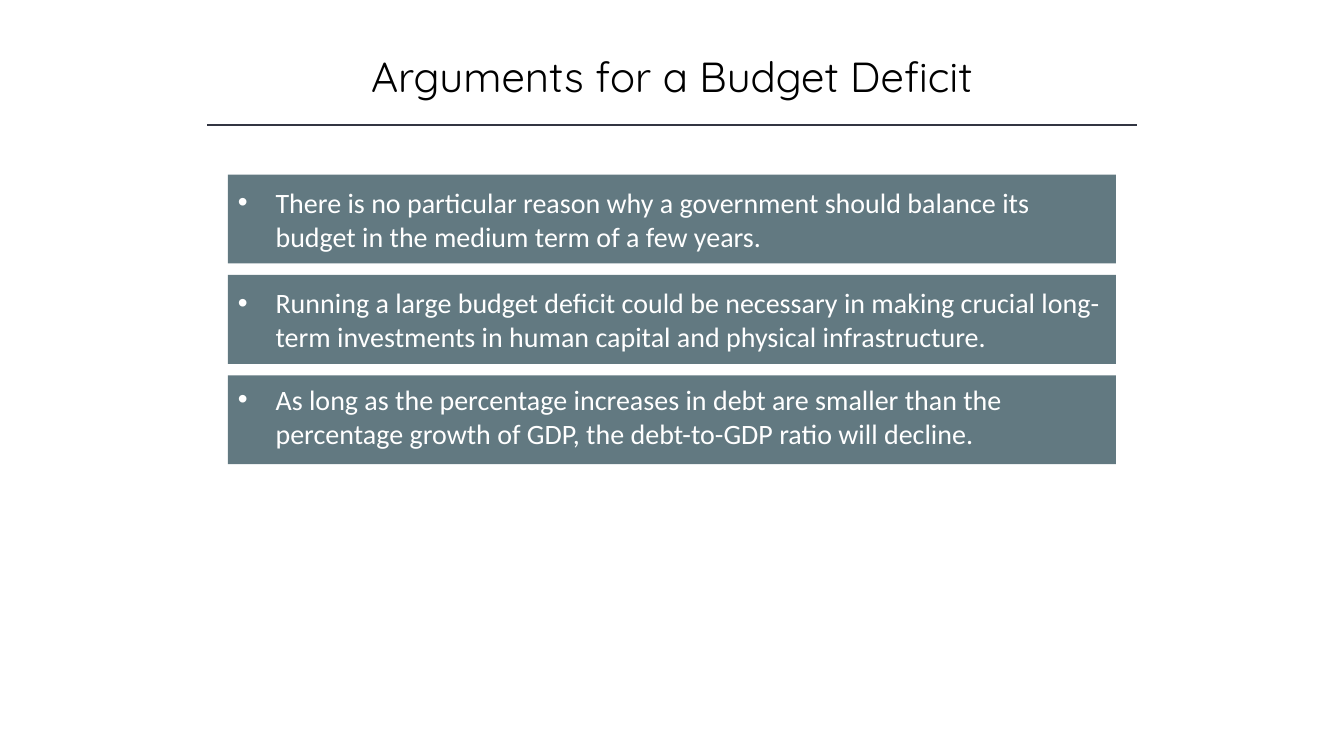
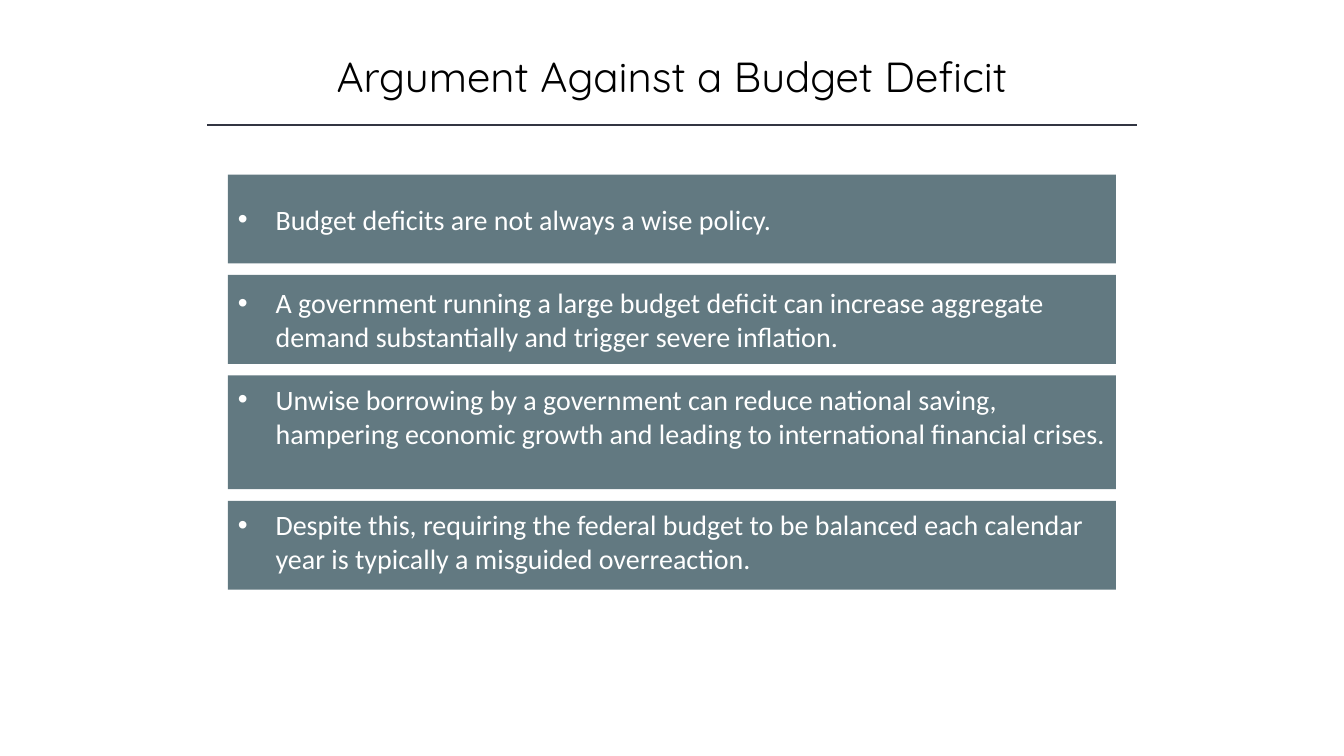
import pptx
import pptx.dml.color
import pptx.enum.shapes
import pptx.enum.text
import pptx.oxml
import pptx.util
from lxml import etree

Cm, Pt = pptx.util.Cm, pptx.util.Pt
ANCHOR = pptx.enum.text.MSO_ANCHOR
ALIGN = pptx.enum.text.PP_ALIGN

# Content: a title, then each argument with its band height in cm
NORMAL, TALL = 2.24, 2.87
SLIDES = [
    ("Arguments for a Budget Deficit", [
        ("There is no particular reason why a government should balance its "
         "budget in the medium term of a few years.", NORMAL),
        ("Running a large budget deficit could be necessary in making crucial "
         "long-term investments in human capital and physical infrastructure.", NORMAL),
        ("As long as the percentage increases in debt are smaller than the "
         "percentage growth of GDP, the debt-to-GDP ratio will decline.", NORMAL),
    ]),
    ("Argument Against a Budget Deficit", [
        ("Budget deficits are not always a wise policy.", NORMAL),
        ("A government running a large budget deficit can increase aggregate "
         "demand substantially and trigger severe inflation.", NORMAL),
        ("Unwise borrowing by a government can reduce national saving, hampering "
         "economic growth and leading to international financial crises.", TALL),
        ("Despite this, requiring the federal budget to be balanced each calendar "
         "year is typically a misguided overreaction.", NORMAL),
    ]),
]

# Shared style, lengths in cm
COLORS = {"title": "000000", "rule": "323542", "band": "627981", "text": "FFFFFF"}
SLIDE_W, SLIDE_H = 33.87, 19.05
TITLE_TOP, TITLE_W, TITLE_H = 1.14, 24.4, 1.55
RULE_Y, RULE_W = 3.15, 23.42
BANDS_TOP, BAND_W, BAND_GAP = 4.4, 22.38, 0.29
BULLET_INDENT = 0.95
CENTERED_BANDS = 2  # later bands start their text at the top
TOP_INSET = 0.18


def color(name):
    return pptx.dml.color.RGBColor.from_string(COLORS[name])


def centered_left(width):
    return (SLIDE_W - width) / 2


def write(shape, text, *, font, size, fill, align=ALIGN.LEFT,
          anchor=ANCHOR.TOP, top_inset=0.13, bullet=False):
    frame = shape.text_frame
    frame.word_wrap = True
    frame.vertical_anchor = anchor
    frame.margin_top = Cm(top_inset)
    paragraph = frame.paragraphs[0]
    paragraph.alignment = align
    run = paragraph.add_run()
    run.text = text
    run.font.name, run.font.size = font, Pt(size)
    run.font.color.rgb = color(fill)
    if bullet:
        props = paragraph._p.get_or_add_pPr()
        props.set("marL", str(Cm(BULLET_INDENT)))
        props.set("indent", str(-Cm(BULLET_INDENT)))
        for tag, key, value in (("a:buFont", "typeface", "Arial"),
                                ("a:buChar", "char", "•")):
            etree.SubElement(props, pptx.oxml.ns.qn(tag)).set(key, value)


def add_heading(slide, title):
    heading = slide.shapes.add_textbox(
        Cm(centered_left(TITLE_W)), Cm(TITLE_TOP), Cm(TITLE_W), Cm(TITLE_H))
    write(heading, title, font="Quicksand", size=30, fill="title", align=ALIGN.CENTER)
    left = centered_left(RULE_W)
    rule = slide.shapes.add_connector(
        pptx.enum.shapes.MSO_CONNECTOR.STRAIGHT,
        Cm(left), Cm(RULE_Y), Cm(left + RULE_W), Cm(RULE_Y))
    rule.line.color.rgb = color("rule")
    rule.line.width = Pt(1)
    etree.SubElement(rule._element.spPr, pptx.oxml.ns.qn("a:effectLst"))


def add_bands(slide, arguments):
    top = BANDS_TOP
    for index, (argument, height) in enumerate(arguments):
        band = slide.shapes.add_shape(
            pptx.enum.shapes.MSO_SHAPE.RECTANGLE,
            Cm(centered_left(BAND_W)), Cm(top), Cm(BAND_W), Cm(height))
        band.shadow.inherit = False
        band.fill.solid()
        band.fill.fore_color.rgb = color("band")
        band.line.fill.background()
        if index < CENTERED_BANDS:
            placing = {"anchor": ANCHOR.MIDDLE}
        else:
            placing = {"top_inset": TOP_INSET}
        write(band, argument, font="Calibri", size=20, fill="text",
              bullet=True, **placing)
        top += height + BAND_GAP


def main():
    deck = pptx.Presentation()
    deck.slide_width, deck.slide_height = Cm(SLIDE_W), Cm(SLIDE_H)
    for title, arguments in SLIDES:
        slide = deck.slides.add_slide(deck.slide_layouts[6])
        add_heading(slide, title)
        add_bands(slide, arguments)
    deck.save("out.pptx")


if __name__ == "__main__":
    main()
